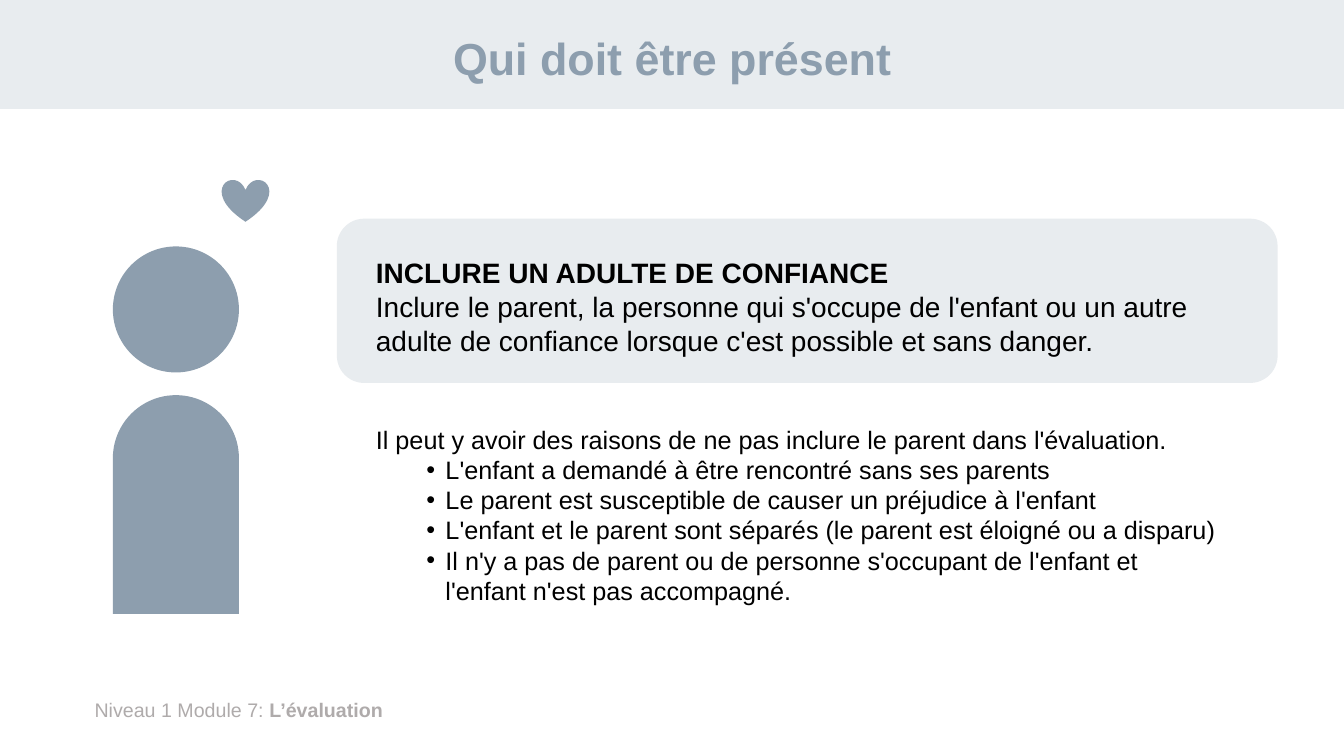
import pptx
import pptx.dml.color
import pptx.enum.shapes
import pptx.enum.text
import pptx.util
import lxml.etree

WIDE = pptx.util.Inches(13.33)
HIGH = pptx.util.Inches(7.5)
KIND = pptx.enum.shapes.MSO_SHAPE
ALIGN = pptx.enum.text.PP_ALIGN
COLORS = {"slate": "8D9EAE", "pale": "E8ECEF", "gray": "AFABAB", "black": "000000"}
RAISONS = [
    "L'enfant a demandé à être rencontré sans ses parents",
    "Le parent est susceptible de causer un préjudice à l'enfant",
    "L'enfant et le parent sont séparés (le parent est éloigné ou a disparu)",
    "Il n'y a pas de parent ou de personne s'occupant de l'enfant "
    "et l'enfant n'est pas accompagné.",
]


class Page:
    """Style and current slide; boxes are left, top, width, height in percent."""

    font = "Arial"

    def __init__(self, deck):
        self.slide = deck.slides.add_slide(deck.slide_layouts[5])

    def color(self, name):
        return pptx.dml.color.RGBColor.from_string(COLORS[name])

    def place(self, box):
        sides = (WIDE, HIGH, WIDE, HIGH)
        return [round(side * share / 100) for side, share in zip(sides, box)]

    def shape(self, kind, box, fill, adjust=()):
        shape = self.slide.shapes.add_shape(kind, *self.place(box))
        shape.shadow.inherit = False
        shape.fill.solid()
        shape.fill.fore_color.rgb = self.color(fill)
        shape.line.fill.background()
        for i, value in enumerate(adjust):
            shape.adjustments[i] = value

    def title(self, text, box):
        title = self.slide.shapes.title
        title.left, title.top, title.width, title.height = self.place(box)
        # The placeholder goes in front of the band drawn before it.
        self.slide.shapes._spTree.append(title._element)
        frame = title.text_frame
        frame.vertical_anchor = pptx.enum.text.MSO_ANCHOR.MIDDLE
        para = frame.paragraphs[0]
        para.alignment = ALIGN.CENTER
        para.line_spacing = 0.9
        self.run(para, text, 32, "slate", True)

    def text(self, box):
        frame = self.slide.shapes.add_textbox(*self.place(box)).text_frame
        frame.word_wrap = True
        return frame

    def para(self, frame, text, size, bold=False, before=0):
        para = frame.paragraphs[0]
        if para.runs:
            para = frame.add_paragraph()
        para.space_before = pptx.util.Pt(before)
        self.run(para, text, size, "black", bold)
        return para

    def run(self, para, text, size, color, bold=False):
        run = para.add_run()
        run.text = text
        run.font.name = self.font
        run.font.size = pptx.util.Pt(size)
        run.font.bold = bold
        run.font.color.rgb = self.color(color)

    def bullet(self, frame, text, size):
        para = self.para(frame, text, size)
        para.level = 1
        props = para._p.get_or_add_pPr()
        props.set("marL", str(pptx.util.Inches(0.69)))
        props.set("indent", str(pptx.util.Inches(-0.19)))
        for tag, key, value in (("buFont", "typeface", self.font), ("buChar", "char", "•")):
            mark = lxml.etree.SubElement(props, pptx.oxml.ns.qn("a:" + tag))
            mark.set(key, value)


def main():
    deck = pptx.Presentation()
    deck.slide_width, deck.slide_height = WIDE, HIGH
    page = Page(deck)

    page.shape(KIND.RECTANGLE, (0, 0, 100, 14.4), "pale")
    page.title("Qui doit être présent", (6.9, 1.73, 86.27, 12.67))

    foot = page.text((6.3, 91.6, 85.15, 4.53)).paragraphs[0]
    page.run(foot, "Niveau 1 Module 7: ", 14, "gray")
    page.run(foot, "L’évaluation", 14, "gray", True)

    page.shape(KIND.ROUNDED_RECTANGLE, (25.06, 28.93, 70, 21.73), "pale")
    body = page.text((27.23, 33.2, 64.37, 48))
    page.para(body, "INCLURE UN ADULTE DE CONFIANCE", 20, True)
    page.para(body, "Inclure le parent, la personne qui s'occupe de l'enfant ou un autre "
              "adulte de confiance lorsque c'est possible et sans danger.", 20)
    page.para(body, "Il peut y avoir des raisons de ne pas inclure le parent "
              "dans l'évaluation.", 18, before=48)
    for reason in RAISONS:
        page.bullet(body, reason, 18)

    page.shape(KIND.OVAL, (8.4, 32.6, 9.38, 16.67), "slate")
    page.shape(KIND.ROUND_2_SAME_RECTANGLE, (8.4, 52.27, 9.38, 28.93), "slate", (0.5, 0))
    page.shape(KIND.HEART, (16.5, 23.73, 3.53, 5.6), "slate")

    deck.save("out.pptx")


if __name__ == "__main__":
    main()
